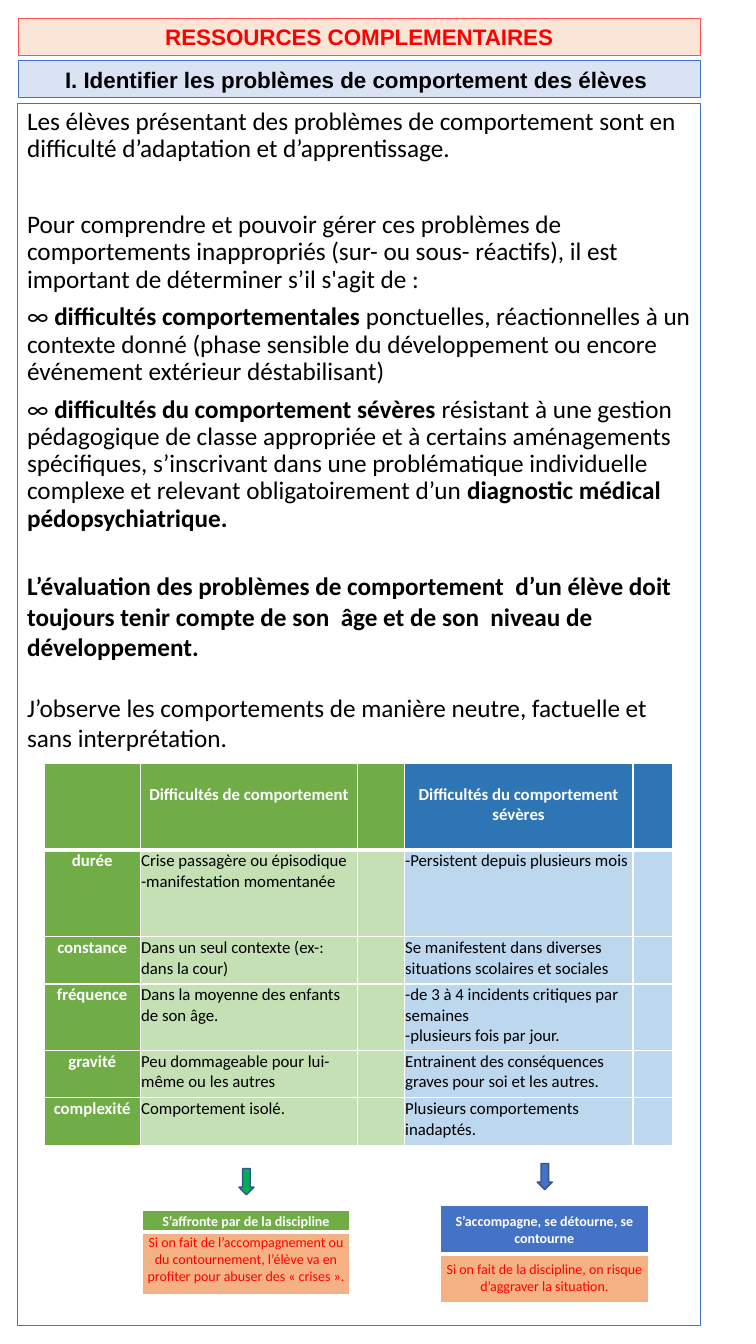
from lxml.etree import SubElement
from pptx import Presentation
from pptx.dml.color import RGBColor
from pptx.enum.shapes import MSO_SHAPE as SHAPE
from pptx.enum.text import MSO_ANCHOR as ANCHOR, PP_ALIGN as ALIGN
from pptx.oxml.ns import qn
from pptx.util import Inches, Pt

COLORS = {
    "white": "FFFFFF", "black": "000000", "red": "FF0000",
    "coral": "FF5050", "cream": "FBE5D6", "pale_blue": "DAE3F3",
    "blue": "4472C4", "deep_blue": "2E75B6", "light_blue": "BDD7EE",
    "green": "70AD47", "light_green": "C5E0B4", "bright_green": "00B050",
    "orange": "F4B183", "outline": "325491",
}

# Body paragraphs: space before, line spacing, (text, bold) runs
BODY = [
    (7.5, 0.9, [("Les élèves présentant des problèmes de comportement sont en "
                 "difficulté d’adaptation et d’apprentissage.", False)]),
    (34.8, 0.9, [("Pour comprendre et pouvoir gérer ces problèmes de comportements "
                  "inappropriés (sur- ou sous- réactifs), il est important de "
                  "déterminer s’il s'agit de :", False)]),
    (7.5, 0.9, [("∞ ", False), ("difficultés comportementales ", True),
                ("ponctuelles, réactionnelles à un contexte donné (phase sensible du "
                 "développement ou encore événement extérieur déstabilisant)", False)]),
    (7.5, 0.9, [("∞ ", False), ("difficultés du comportement sévères ", True),
                ("résistant à une gestion pédagogique de classe appropriée et à "
                 "certains aménagements spécifiques, s’inscrivant dans une "
                 "problématique individuelle complexe et relevant obligatoirement "
                 "d’un ", False),
                ("diagnostic médical pédopsychiatrique.", True)]),
    (27.3, 1.0, [("L’évaluation des problèmes de comportement  d’un élève doit "
                  "toujours tenir compte de son  âge et de son  niveau de", True)]),
    (0, 1.0, [("développement.", True)]),
    (22, 1.0, [("J’observe les comportements de manière neutre, factuelle et sans "
                "interprétation.", False)]),
]

CRITERIA = [
    ["", "Difficultés de comportement", "", "Difficultés du comportement sévères", ""],
    ["durée", "Crise passagère ou épisodique\n-manifestation momentanée", "",
     "-Persistent depuis plusieurs mois", ""],
    ["constance", "Dans un seul contexte (ex-: dans la cour)", "",
     "Se manifestent dans diverses situations scolaires et sociales", ""],
    ["fréquence", "Dans la moyenne des enfants de son âge.", "",
     "-de 3 à 4 incidents critiques par semaines\n-plusieurs fois par jour.", ""],
    ["gravité", "Peu dommageable pour lui-même ou les autres", "",
     "Entrainent des conséquences graves pour soi et les autres.", ""],
    ["complexité", "Comportement isolé.", "", "Plusieurs comportements inadaptés.", ""],
]


def rgb(name):
    return RGBColor.from_string(COLORS[name])


def style_font(font, size, color, bold=None, name="Calibri"):
    font.name, font.size, font.bold = name, Pt(size), bold
    font.color.rgb = rgb(color)


def add_box(s, shape, at, fill, line, width=0.75):
    sp = s.shapes.add_shape(shape, *map(Inches, at))
    sp.shadow.inherit = False
    if fill:
        sp.fill.solid()
        sp.fill.fore_color.rgb = rgb(fill)
    else:
        sp.fill.background()
    sp.line.color.rgb = rgb(line)
    sp.line.width = Pt(width)
    return sp


def add_banner(s, top, text, fill, line, color):
    sp = add_box(s, SHAPE.RECTANGLE, (0.18, top, 6.77, 0.37), fill, line)
    tf = sp.text_frame
    tf.word_wrap = True
    tf.vertical_anchor = ANCHOR.MIDDLE
    p = tf.paragraphs[0]
    p.text, p.alignment = text, ALIGN.CENTER
    style_font(p.font, 16, color, True, "Arial")


def add_body(s):
    sp = add_box(s, SHAPE.RECTANGLE, (0.17, 1.03, 6.78, 12.12), None, "blue")
    tf = sp.text_frame
    tf.word_wrap = True
    tf.vertical_anchor = ANCHOR.TOP
    for i, (before, spacing, runs) in enumerate(BODY):
        p = tf.add_paragraph() if i else tf.paragraphs[0]
        p.alignment = ALIGN.LEFT
        p.space_before, p.line_spacing = Pt(before), spacing
        style_font(p.font, 18, "black")
        for text, bold in runs:
            r = p.add_run()
            r.text, r.font.bold = text, bold


def set_borders(cell, row):
    """White grid with a thick rule under the first row."""
    widths = {"L": 1, "R": 1, "T": 3 if row == 1 else 1, "B": 1 if row else 3}
    tc_pr = cell._tc.get_or_add_tcPr()
    for side, width in widths.items():
        ln = SubElement(tc_pr, qn(f"a:ln{side}"), w=str(Pt(width)))
        fill = SubElement(ln, qn("a:solidFill"))
        SubElement(fill, qn("a:srgbClr"), val=COLORS["white"])


def fill_cell(cell, row, text, fill, size, color, bold, align, margins, anchor=ANCHOR.TOP):
    set_borders(cell, row)
    cell.fill.solid()
    cell.fill.fore_color.rgb = rgb(fill)
    side, top, bottom = map(Inches, margins)
    cell.margin_left = cell.margin_right = side
    cell.margin_top, cell.margin_bottom = top, bottom
    cell.vertical_anchor = anchor
    cell.text = text
    for p in cell.text_frame.paragraphs:
        p.alignment = align
        style_font(p.font, size, color, bold)


def add_grid(s, left, top, cols, rows):
    frame = s.shapes.add_table(len(rows), len(cols), Inches(left), Inches(top),
                               Inches(sum(cols)), Inches(sum(rows)))
    table = frame.table
    table.first_row = table.horz_banding = False
    for col, width in zip(table.columns, cols):
        col.width = Inches(width)
    for row, height in zip(table.rows, rows):
        row.height = Inches(height)
    return table


def add_criteria(s):
    table = add_grid(s, 0.44, 7.57, [0.95, 2.16, 0.46, 2.27, 0.39],
                     [0.86, 0.86, 0.47, 0.66, 0.47, 0.47])
    head_fills = ["green"] * 3 + ["deep_blue"] * 2
    body_fills = ["green"] + ["light_green"] * 2 + ["light_blue"] * 2
    for i, texts in enumerate(CRITERIA):
        for j, text in enumerate(texts):
            label = i == 0 or j == 0
            fill_cell(table.cell(i, j), i, text, (body_fills if i else head_fills)[j], 12,
                      "white" if label else "black", label,
                      ALIGN.CENTER if label else ALIGN.LEFT,
                      (0.01, 0.01 if i else 0.21, 0.01))


def add_advice(s, left, top, rows, head, fill, warning, anchor):
    table = add_grid(s, left, top, [2.06], rows)
    margins = (0.03, 0.02, 0.02)
    fill_cell(table.cell(0, 0), 0, head, fill, 10, "white", True,
              ALIGN.CENTER, margins, anchor)
    fill_cell(table.cell(1, 0), 1, warning, "orange", 10, "red", False,
              ALIGN.CENTER, margins, anchor)


def main():
    prs = Presentation()
    prs.slide_width, prs.slide_height = Inches(7.5), Inches(13.33)
    s = prs.slides.add_slide(prs.slide_layouts[6])

    # Headings and main text
    add_banner(s, 0.6, "I. Identifier les problèmes de comportement des élèves ",
               "pale_blue", "blue", "black")
    add_body(s)
    add_banner(s, 0.18, "RESSOURCES COMPLEMENTAIRES", "cream", "coral", "red")

    # Comparison of the two kinds of difficulty
    add_criteria(s)

    # What to do in each case
    add_advice(s, 1.41, 12.01, [0.2, 0.62], "S’affronte par de la discipline", "green",
               "Si on fait de l’accompagnement ou du contournement, l’élève va en "
               "profiter pour abuser des « crises ».", ANCHOR.TOP)
    add_advice(s, 4.37, 11.96, [0.48, 0.48], "S’accompagne, se détourne, se contourne",
               "blue", "Si on fait de la discipline, on risque d’aggraver la situation.",
               ANCHOR.MIDDLE)
    for left, top, fill in [(2.37, 11.59, "bright_green"), (5.33, 11.54, "blue")]:
        add_box(s, SHAPE.DOWN_ARROW, (left, top, 0.15, 0.26), fill, "outline", 1)

    prs.save("out.pptx")


if __name__ == "__main__":
    main()
